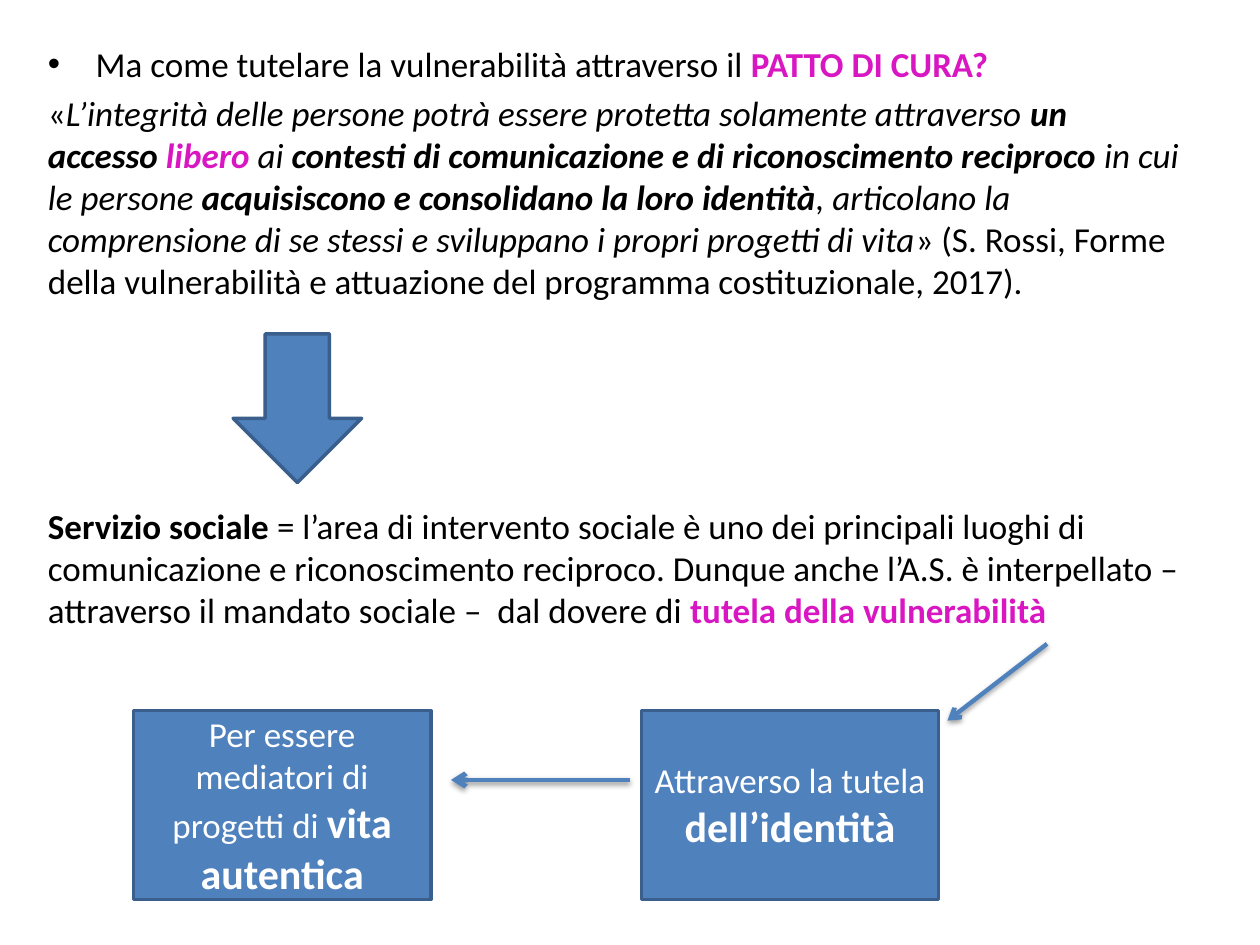
from dataclasses import dataclass

from lxml.etree import SubElement
from pptx import Presentation
from pptx.dml.color import RGBColor
from pptx.enum.shapes import MSO_CONNECTOR as Connector
from pptx.enum.shapes import MSO_SHAPE as Preset
from pptx.enum.text import MSO_ANCHOR as Anchor
from pptx.enum.text import MSO_AUTO_SIZE as AutoSize
from pptx.enum.text import PP_ALIGN as Align
from pptx.oxml.ns import qn
from pptx.util import Inches, Pt

COLUMNS, ROWS = 100, 75
BLACK, WHITE, MAGENTA = "000000", "FFFFFF", "D917C2"
BLUE, DARK_BLUE = "4F81BD", "3A5F8C"
BOX_TOP, BOX_WIDTH, BOX_HEIGHT = 56.4, 23.6, 15

deck = Presentation()
deck.slide_width, deck.slide_height = Inches(10), Inches(7.5)


@dataclass(frozen=True)
class Span:
    text: str
    bold: bool = False
    italic: bool = False
    color: str = BLACK
    size: float = 20


@dataclass(frozen=True)
class Passage:
    spans: tuple[Span, ...]
    space_before: float = 4
    bulleted: bool = False


@dataclass(frozen=True)
class Block:
    preset: Preset
    area: tuple[float, float, float, float]
    spans: tuple[Span, ...] = ()


@dataclass(frozen=True)
class Arrow:
    start: tuple[float, float]
    end: tuple[float, float]
    width: float


PASSAGES = (
    Passage((
        Span("Ma come tutelare la vulnerabilità attraverso il "),
        Span("PATTO DI CURA?", bold=True, color=MAGENTA),
    ), bulleted=True),
    Passage((
        Span("«"),
        Span("L’integrità delle persone potrà essere protetta solamente attraverso ", italic=True),
        Span("un accesso ", bold=True, italic=True),
        Span("libero ", bold=True, italic=True, color=MAGENTA),
        Span("ai ", italic=True),
        Span("contesti di comunicazione e di riconoscimento reciproco ", bold=True, italic=True),
        Span("in cui le persone ", italic=True),
        Span("acquisiscono e consolidano la loro identità", bold=True, italic=True),
        Span(", articolano la comprensione di se stessi e sviluppano i propri progetti di vita",
             italic=True),
        Span("» (S. Rossi, Forme della vulnerabilità e attuazione del programma "
             "costituzionale, 2017)."),
    )),
    Passage((
        Span("Servizio sociale ", bold=True),
        Span("= l’area di intervento sociale è uno dei principali luoghi di comunicazione e "
             "riconoscimento reciproco. Dunque anche l’A.S. è interpellato – attraverso il "
             "mandato sociale –  dal dovere di "),
        Span("tutela della vulnerabilità", bold=True, color=MAGENTA),
    ), space_before=116),
)

BLOCKS = (
    Block(Preset.DOWN_ARROW, (18.5, 26.5, 10.2, 11.8)),
    Block(Preset.RECTANGLE, (50.9, BOX_TOP, BOX_WIDTH, BOX_HEIGHT), (
        Span("Attraverso la tutela ", color=WHITE),
        Span("dell’identità", bold=True, color=WHITE, size=24),
    )),
    Block(Preset.RECTANGLE, (10.6, BOX_TOP, BOX_WIDTH, BOX_HEIGHT), (
        Span("Per essere mediatori di progetti di ", color=WHITE),
        Span("vita autentica", bold=True, color=WHITE, size=24),
    )),
)

ARROWS = (
    Arrow((83.1, 51.1), (75.2, 57.2), 2.5),
    Arrow((50, 61.9), (35.8, 61.9), 2.75),
)


def rgb(color: str) -> RGBColor:
    """Turn a hex string into a colour."""
    return RGBColor.from_string(color)


def col(count: float) -> int:
    """Length of a number of grid columns."""
    return round(deck.slide_width * count / COLUMNS)


def row(count: float) -> int:
    """Length of a number of grid rows."""
    return round(deck.slide_height * count / ROWS)


def write_spans(paragraph, spans: tuple[Span, ...]) -> None:
    """Add formatted runs to a paragraph."""
    for span in spans:
        run = paragraph.add_run()
        run.text = span.text
        font = run.font
        font.name, font.size = "Calibri", Pt(span.size)
        font.bold, font.italic = span.bold, span.italic
        font.color.rgb = rgb(span.color)


def write_passages(body, passages: tuple[Passage, ...]) -> None:
    """Place the body and fill it with passages."""
    body.left, body.top, body.width, body.height = col(2.8), row(2.9), col(92.2), row(68.5)
    frame = body.text_frame
    frame.auto_size = AutoSize.NONE
    for index, passage in enumerate(passages):
        paragraph = frame.add_paragraph() if index else frame.paragraphs[0]
        paragraph.space_before = Pt(passage.space_before)
        properties = paragraph._p.get_or_add_pPr()
        indent = Inches(0.38) if passage.bulleted else 0
        properties.set("marL", str(indent))
        properties.set("indent", str(-indent))
        if passage.bulleted:
            SubElement(properties, qn("a:buFont"), typeface="Arial")
            SubElement(properties, qn("a:buChar"), char="•")
        else:
            SubElement(properties, qn("a:buNone"))
        write_spans(paragraph, passage.spans)


def draw_block(shapes, block: Block) -> None:
    """Draw a filled shape with its centred caption."""
    left, top, width, height = block.area
    shape = shapes.add_shape(block.preset, col(left), row(top), col(width), row(height))
    shape.shadow.inherit = False
    shape.fill.solid()
    shape.fill.fore_color.rgb = rgb(BLUE)
    shape.line.color.rgb = rgb(DARK_BLUE)
    shape.line.width = Pt(2)
    shape.text_frame.word_wrap = True
    shape.text_frame.vertical_anchor = Anchor.MIDDLE
    caption = shape.text_frame.paragraphs[0]
    caption.alignment = Align.CENTER
    write_spans(caption, block.spans)


def draw_arrow(shapes, arrow: Arrow) -> None:
    """Draw a straight arrow with a soft shadow below it."""
    (x1, y1), (x2, y2) = arrow.start, arrow.end
    connector = shapes.add_connector(Connector.STRAIGHT, col(x1), row(y1), col(x2), row(y2))
    connector.line.color.rgb = rgb(BLUE)
    connector.line.width = Pt(arrow.width)
    SubElement(connector.line._get_or_add_ln(), qn("a:tailEnd"), type="arrow")
    effects = SubElement(connector._element.spPr, qn("a:effectLst"))
    shadow = SubElement(effects, qn("a:outerShdw"), blurRad=str(Pt(3.1)),
                        dist=str(Pt(1.6)), dir="5400000", rotWithShape="0")
    tint = SubElement(shadow, qn("a:srgbClr"), val=BLACK)
    SubElement(tint, qn("a:alpha"), val="38000")


def main() -> None:
    """Build the slide and save it."""
    slide = deck.slides.add_slide(deck.slide_layouts[1])
    title = slide.shapes.title._element
    title.getparent().remove(title)
    write_passages(slide.placeholders[1], PASSAGES)
    for block in BLOCKS:
        draw_block(slide.shapes, block)
    for arrow in ARROWS:
        draw_arrow(slide.shapes, arrow)
    deck.save("out.pptx")


if __name__ == "__main__":
    main()
